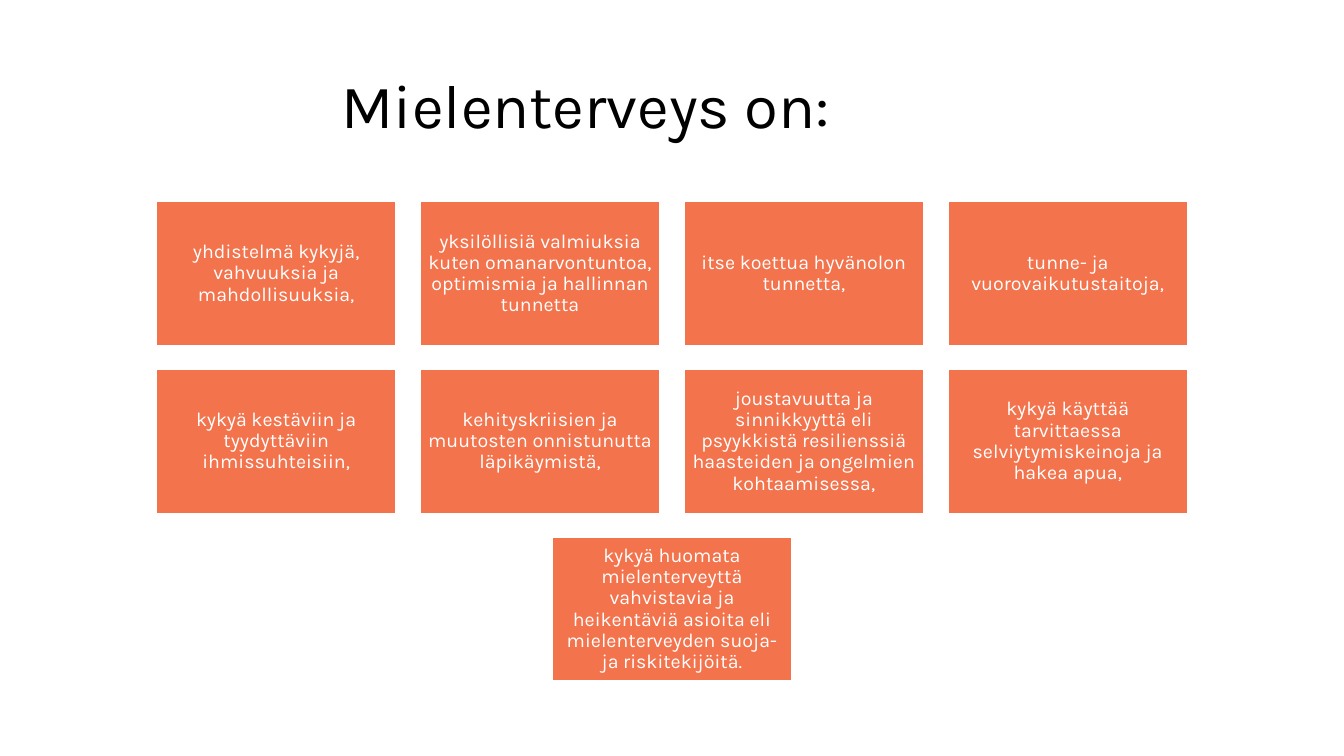
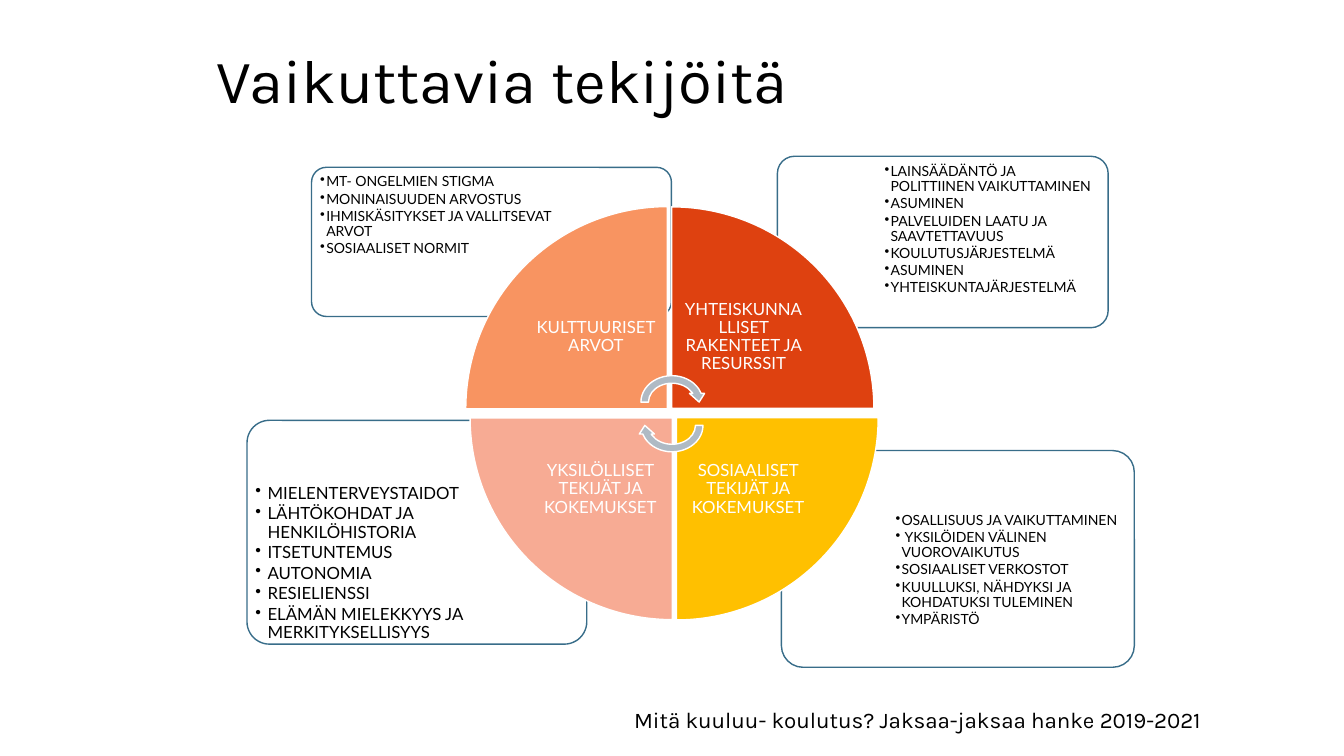
from dataclasses import dataclass

from lxml import etree
from pptx import Presentation
from pptx.dml.color import RGBColor
from pptx.enum.shapes import MSO_SHAPE
from pptx.enum.text import MSO_ANCHOR, PP_ALIGN
from pptx.oxml.ns import qn
from pptx.util import Inches, Pt

RECTANGLE = MSO_SHAPE.RECTANGLE
ROUNDED = MSO_SHAPE.ROUNDED_RECTANGLE
WEDGE = MSO_SHAPE.PIE_WEDGE
CIRCULAR_ARROW = MSO_SHAPE.CIRCULAR_ARROW
TOP, MIDDLE = MSO_ANCHOR.TOP, MSO_ANCHOR.MIDDLE
LEFT, CENTER = PP_ALIGN.LEFT, PP_ALIGN.CENTER


@dataclass(frozen=True)
class Theme:
    heading_font: str = "Karla"
    diagram_font: str = "Lato"
    title_size: int = 44
    footer_size: int = 16
    tile_size: int = 14
    wedge_size: int = 12
    black: str = "000000"
    white: str = "FFFFFF"
    tile: str = "F2734C"
    card_line: str = "386D89"
    arrow: str = "AFBAC4"
    culture: str = "F89461"
    society: str = "DE4110"
    individual: str = "F7AB94"
    social: str = "FFC000"
    line_spacing: float = 0.9


@dataclass(frozen=True)
class Box:
    left: float
    top: float
    width: float
    height: float

    def percent(self, left, top, width, height):
        return Box(
            self.left + self.width * left / 100,
            self.top + self.height * top / 100,
            self.width * width / 100,
            self.height * height / 100,
        )

    def emu(self):
        return [Inches(n) for n in (self.left, self.top, self.width, self.height)]


THEME = Theme()
PAGE = Box(0, 0, 13.33, 7.5)

ABILITIES = [
    "yhdistelmä kykyjä, vahvuuksia ja mahdollisuuksia,",
    "yksilöllisiä valmiuksia kuten omanarvontuntoa, optimismia ja hallinnan tunnetta",
    "itse koettua hyvänolon tunnetta,",
    "tunne- ja vuorovaikutustaitoja,",
    "kykyä kestäviin ja tyydyttäviin ihmissuhteisiin,",
    "kehityskriisien ja muutosten onnistunutta läpikäymistä,",
    "joustavuutta ja sinnikkyyttä eli psyykkistä resilienssiä haasteiden ja ongelmien kohtaamisessa,",
    "kykyä käyttää tarvittaessa selviytymiskeinoja ja hakea apua,",
    "kykyä huomata mielenterveyttä vahvistavia ja heikentäviä asioita eli "
    "mielenterveyden suoja- ja riskitekijöitä.",
]


@dataclass(frozen=True)
class Factor:
    name: str
    color: str
    column: int
    row: int
    rotation: int
    card: tuple
    items: tuple
    size: int = 10
    indent: float = 0.06


FACTORS = [
    Factor("SOSIAALISET TEKIJÄT JA KOKEMUKSET", THEME.social, 1, 1, 180,
           (58.14, 59.6, 26.26, 28.67),
           ("OSALLISUUS JA VAIKUTTAMINEN", " YKSILÖIDEN VÄLINEN VUOROVAIKUTUS",
            "SOSIAALISET VERKOSTOT", "KUULLUKSI, NÄHDYKSI JA KOHDATUKSI TULEMINEN",
            "YMPÄRISTÖ")),
    Factor("YKSILÖLLISET TEKIJÄT JA KOKEMUKSET", THEME.individual, 0, 1, 270,
           (18.38, 55.6, 25.28, 29.6),
           ("MIELENTERVEYSTAIDOT", "LÄHTÖKOHDAT JA HENKILÖHISTORIA", "ITSETUNTEMUS",
            "AUTONOMIA", "RESIELIENSSI", "ELÄMÄN MIELEKKYYS JA MERKITYKSELLISYYS"),
           12, 0.12),
    Factor("YHTEISKUNNALLISET RAKENTEET JA RESURSSIT", THEME.society, 1, 0, 90,
           (57.84, 20.67, 24.61, 22.67),
           ("LAINSÄÄDÄNTÖ JA POLITTIINEN VAIKUTTAMINEN", "ASUMINEN",
            "PALVELUIDEN LAATU JA SAAVTETTAVUUS", "KOULUTUSJÄRJESTELMÄ", "ASUMINEN",
            "YHTEISKUNTAJÄRJESTELMÄ")),
    Factor("KULTTUURISET ARVOT", THEME.culture, 0, 0, 0,
           (23.18, 22.13, 26.78, 19.73),
           ("MT- ONGELMIEN STIGMA", "MONINAISUUDEN ARVOSTUS",
            "IHMISKÄSITYKSET JA VALLITSEVAT ARVOT", "SOSIAALISET NORMIT")),
]


def add_figure(slide, box, kind, fill, line=THEME.white, rotation=0):
    shape = slide.shapes.add_shape(kind, *box.emu())
    shape.shadow.inherit = False
    shape.fill.solid()
    shape.fill.fore_color.rgb = RGBColor.from_string(fill)
    shape.line.color.rgb = RGBColor.from_string(line)
    shape.line.width = Pt(1)
    shape.rotation = rotation
    return shape


def add_bullet(paragraph, indent):
    properties = paragraph._p.get_or_add_pPr()
    properties.set("marL", str(Inches(indent)))
    properties.set("indent", str(-Inches(indent)))
    etree.SubElement(properties, qn("a:buChar")).set("char", "•")


def write(shape, lines, size, font, color, anchor=MIDDLE, align=CENTER,
          inset=None, indent=0, spacing=THEME.line_spacing):
    frame = shape.text_frame
    frame.word_wrap = True
    frame.vertical_anchor = anchor
    if inset is not None:
        frame.margin_left = frame.margin_right = Inches(inset)
        frame.margin_top = frame.margin_bottom = Inches(inset)
    for number, line in enumerate(lines):
        paragraph = frame.add_paragraph() if number else frame.paragraphs[0]
        paragraph.text = line
        if indent:
            add_bullet(paragraph, indent)
            paragraph.space_after = Pt(0.15 * size)
        paragraph.alignment = align
        paragraph.line_spacing = spacing
        paragraph.font.size = Pt(size)
        paragraph.font.name = font
        paragraph.font.color.rgb = RGBColor.from_string(color)


def add_text(slide, box, lines, *style, **layout):
    write(slide.shapes.add_textbox(*box.emu()), lines, *style, **layout)


def add_title(slide, box, title):
    add_text(slide, box, [title], THEME.title_size, THEME.heading_font, THEME.black,
             align=LEFT)


def add_footer(slide, box, text):
    add_text(slide, box, [text], THEME.footer_size, THEME.heading_font, THEME.black,
             anchor=TOP, align=LEFT, spacing=1.0)


def add_tiles(slide, box, texts, columns=4):
    width = box.width / (columns + 0.1 * (columns - 1))
    height, gap = 0.6 * width, 0.1 * width
    for start in range(0, len(texts), columns):
        row = texts[start:start + columns]
        row_width = len(row) * (width + gap) - gap
        left = box.left + (box.width - row_width) / 2
        top = box.top + start // columns * (height + gap)
        for column, text in enumerate(row):
            place = Box(left + column * (width + gap), top, width, height)
            tile = add_figure(slide, place, RECTANGLE, THEME.tile)
            write(tile, [text], THEME.tile_size, THEME.heading_font, THEME.white,
                  inset=0.06)


def add_card(slide, box, factor):
    card = add_figure(slide, box, ROUNDED, THEME.white, THEME.card_line)
    card.adjustments[0] = 0.1
    color = card._element.spPr.find(qn("a:solidFill"))[0]
    etree.SubElement(color, qn("a:alpha")).set("val", "90000")
    place = box.percent((1.3, 31.2)[factor.column], (2.3, 27)[factor.row], 67.5, 70.5)
    add_text(slide, place, factor.items, factor.size, THEME.diagram_font, THEME.black,
             anchor=TOP, align=LEFT, inset=0.04, indent=factor.indent)


def add_wheel(slide, box, factors):
    size, seam, label = 48.9, 1.1, 71
    for factor in factors:
        column, row = factor.column, factor.row
        wedge = box.percent(column * (size + seam) + row * seam, row * (100 - size),
                            size, size)
        add_figure(slide, wedge, WEDGE, factor.color, rotation=factor.rotation)
        place = wedge.percent((1 - column) * (100 - label), (1 - row) * (100 - label),
                              label, label)
        add_text(slide, place, [factor.name], THEME.wedge_size, THEME.diagram_font,
                 THEME.white, inset=0.09)
    for top, rotation in ((40, 0), (45.61, 180)):
        add_figure(slide, box.percent(41.56, top, 16.87, 14.63), CIRCULAR_ARROW,
                   THEME.arrow, rotation=rotation)


def build_abilities(slide, box):
    add_title(slide, box.percent(24.68, 4.67, 68.49, 19.33), "Mielenterveys on:")
    add_tiles(slide, box.percent(11.63, 26.67, 76.74, 63.47), ABILITIES)


def build_factors(slide, box):
    add_title(slide, box.percent(15.38, 4.67, 64.74, 12.67), "Vaikuttavia tekijöitä")
    for factor in FACTORS:
        add_card(slide, box.percent(*factor.card), factor)
    add_wheel(slide, box.percent(34.66, 27.33, 30.68, 54.67), FACTORS)
    add_footer(slide, box.percent(46.44, 92.8, 48.46, 4.93),
               "Mitä kuuluu- koulutus? Jaksaa-jaksaa hanke 2019-2021")


def main():
    presentation = Presentation()
    presentation.slide_width = Inches(PAGE.width)
    presentation.slide_height = Inches(PAGE.height)
    for build in (build_abilities, build_factors):
        build(presentation.slides.add_slide(presentation.slide_layouts[6]), PAGE)
    presentation.save("out.pptx")


if __name__ == "__main__":
    main()
